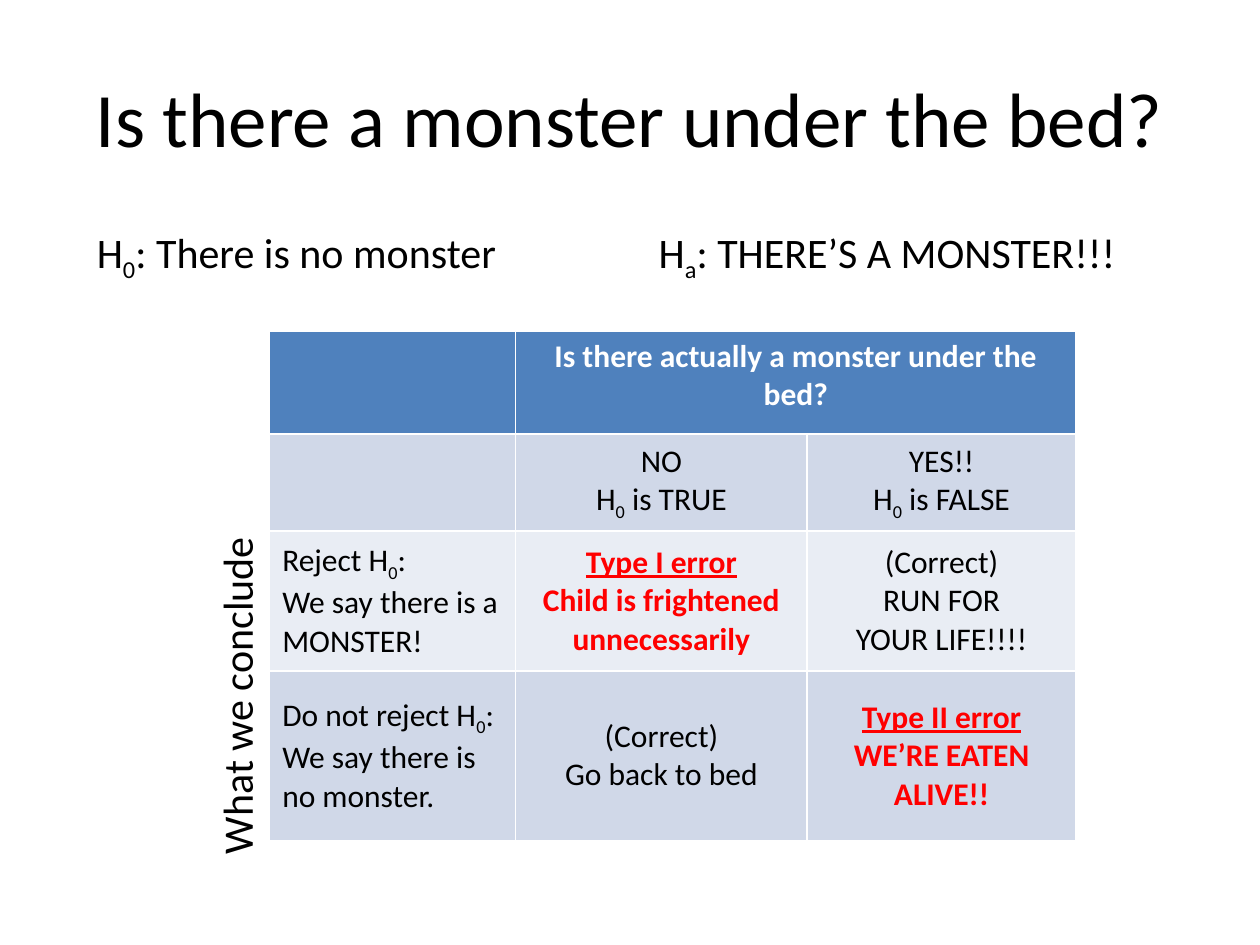
from dataclasses import dataclass

from pptx import Presentation
from pptx.dml.color import RGBColor as RGB
from pptx.enum.text import MSO_ANCHOR as ANCHOR, PP_ALIGN as ALIGN
from pptx.util import Inches, Pt

W, H = 10, 7.5  # slide size in inches


@dataclass(frozen=True)
class Theme:
    font: str = "Calibri"
    title: int = 44
    label: int = 24
    cell: int = 18
    ink: RGB = RGB(0, 0, 0)
    white: RGB = RGB(255, 255, 255)
    error: RGB = RGB(255, 0, 0)
    header: RGB = RGB(0x4F, 0x81, 0xBD)
    bands: tuple = (RGB(0xD0, 0xD8, 0xE8), RGB(0xE9, 0xED, 0xF4))


THEME = Theme()

# In all texts, "_" makes the next character a subscript.
TITLE = "Is there a monster under the bed?"
HYPOTHESES = ("H_0: There is no monster", "H_a: THERE’S A MONSTER!!!")
SIDE_LABEL = "What we conclude"
QUESTION = "Is there actually a monster under the bed?"
OUTCOMES = [
    ["", "NO\nH_0 is TRUE", "YES!!\nH_0 is FALSE"],
    ["Reject H_0:\nWe say there is a MONSTER!",
     "Type I error\nChild is frightened\nunnecessarily",
     "(Correct)\nRUN FOR\nYOUR LIFE!!!!"],
    ["Do not reject H_0:\nWe say there is no monster.",
     "(Correct)\nGo back to bed",
     "Type II error\nWE’RE EATEN ALIVE!!"],
]
COLUMN_WIDTHS = (1.95, 2.31, 2.13)
ROW_HEIGHTS = (0.82, 0.77, 1.11, 1.35)


def share(x, y, w, h):
    """Turn shares of the slide's size into left, top, width, height."""
    return Inches(x * W), Inches(y * H), Inches(w * W), Inches(h * H)


def write(tf, text, size, color=THEME.ink, align=ALIGN.LEFT, bold=False):
    tf.word_wrap = True
    for i, line in enumerate(text.split("\n")):
        p = tf.paragraphs[0] if i == 0 else tf.add_paragraph()
        p.alignment = align
        p.font.name, p.font.size = THEME.font, Pt(size)
        p.font.bold, p.font.color.rgb = bold, color
        first, *rest = line.split("_")
        p.add_run().text = first
        for part in rest:
            r = p.add_run()
            r.text = part[0]
            r.font._element.set("baseline", "-25000")
            p.add_run().text = part[1:]


def add_title(slide, box):
    sp = slide.shapes.title
    sp.left, sp.top, sp.width, sp.height = box
    sp.text_frame.vertical_anchor = ANCHOR.MIDDLE
    write(sp.text_frame, TITLE, THEME.title, align=ALIGN.CENTER)


def add_label(slide, box, text, rotation=0):
    sp = slide.shapes.add_textbox(*box)
    sp.rotation = rotation
    write(sp.text_frame, text, THEME.label)


def fill_cell(cell, color):
    cell.fill.solid()
    cell.fill.fore_color.rgb = color


def add_outcome_table(slide, box):
    left, top, width, height = box
    table = slide.shapes.add_table(len(ROW_HEIGHTS), len(COLUMN_WIDTHS),
                                   left, top, width, height).table
    for column, share_w in zip(table.columns, COLUMN_WIDTHS):
        column.width = int(width * share_w / sum(COLUMN_WIDTHS))
    for row, share_h in zip(table.rows, ROW_HEIGHTS):
        row.height = int(height * share_h / sum(ROW_HEIGHTS))

    # Header, with the question across both answer columns
    for cell in table.rows[0].cells:
        fill_cell(cell, THEME.header)
    table.cell(0, 1).merge(table.cell(0, 2))
    write(table.cell(0, 1).text_frame, QUESTION, THEME.cell, THEME.white,
          ALIGN.CENTER, bold=True)

    # Answers, conclusions and outcomes; errors stand out in red
    for r, texts in enumerate(OUTCOMES):
        for c, text in enumerate(texts):
            cell = table.cell(r + 1, c)
            fill_cell(cell, THEME.bands[r % 2])
            cell.vertical_anchor = ANCHOR.MIDDLE
            is_error = text.startswith("Type")
            write(cell.text_frame, text, THEME.cell,
                  THEME.error if is_error else THEME.ink,
                  ALIGN.CENTER if c else ALIGN.LEFT, bold=is_error)
            if is_error:
                cell.text_frame.paragraphs[0].runs[0].font.underline = True


def main():
    prs = Presentation()
    prs.slide_width, prs.slide_height = Inches(W), Inches(H)
    slide = prs.slides.add_slide(prs.slide_layouts[5])

    add_outcome_table(slide, share(0.214, 0.35, 0.64, 0.54))
    add_title(slide, share(0.05, 0.04, 0.9, 1 / 6))
    for x, text in zip((0.067, 0.513), HYPOTHESES):
        add_label(slide, share(x, 0.233, 0.42, 0.067), text)
    add_label(slide, share(0.05, 0.7, 0.275, 0.067), SIDE_LABEL, rotation=270)

    prs.save("out.pptx")


if __name__ == "__main__":
    main()
